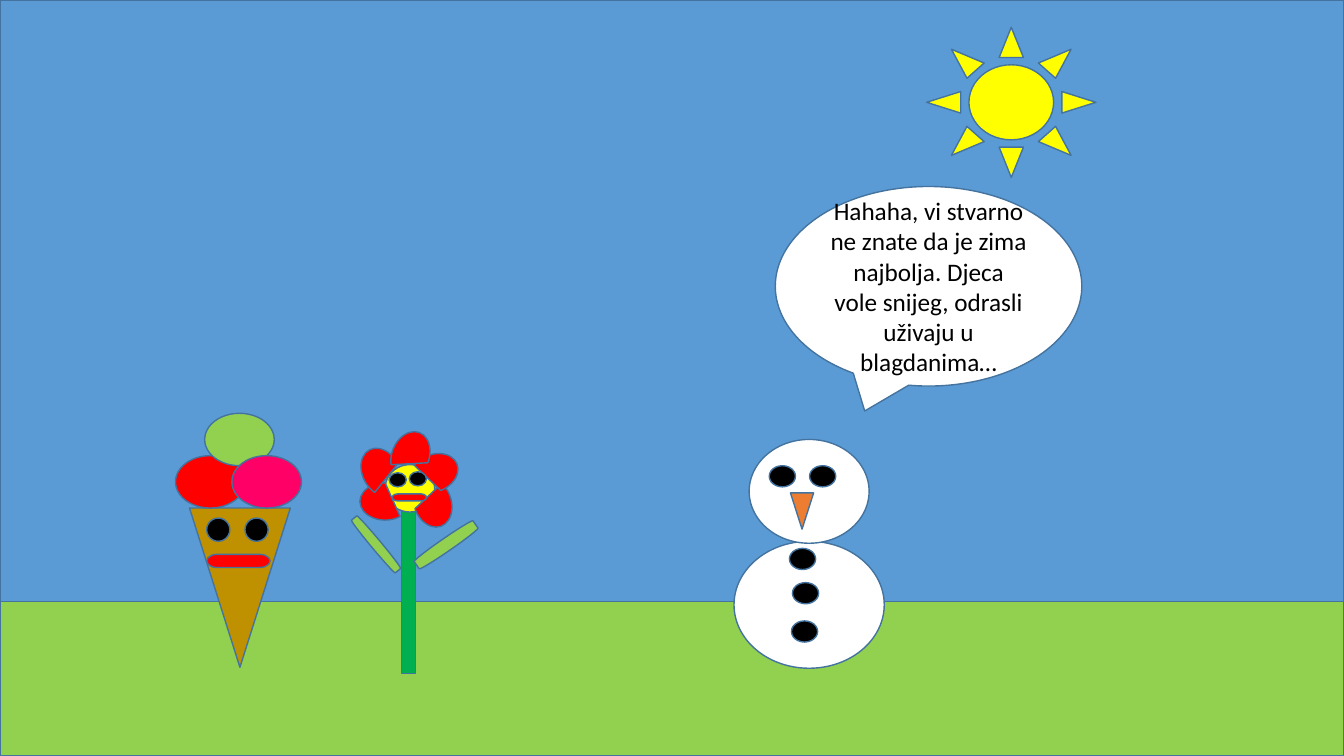
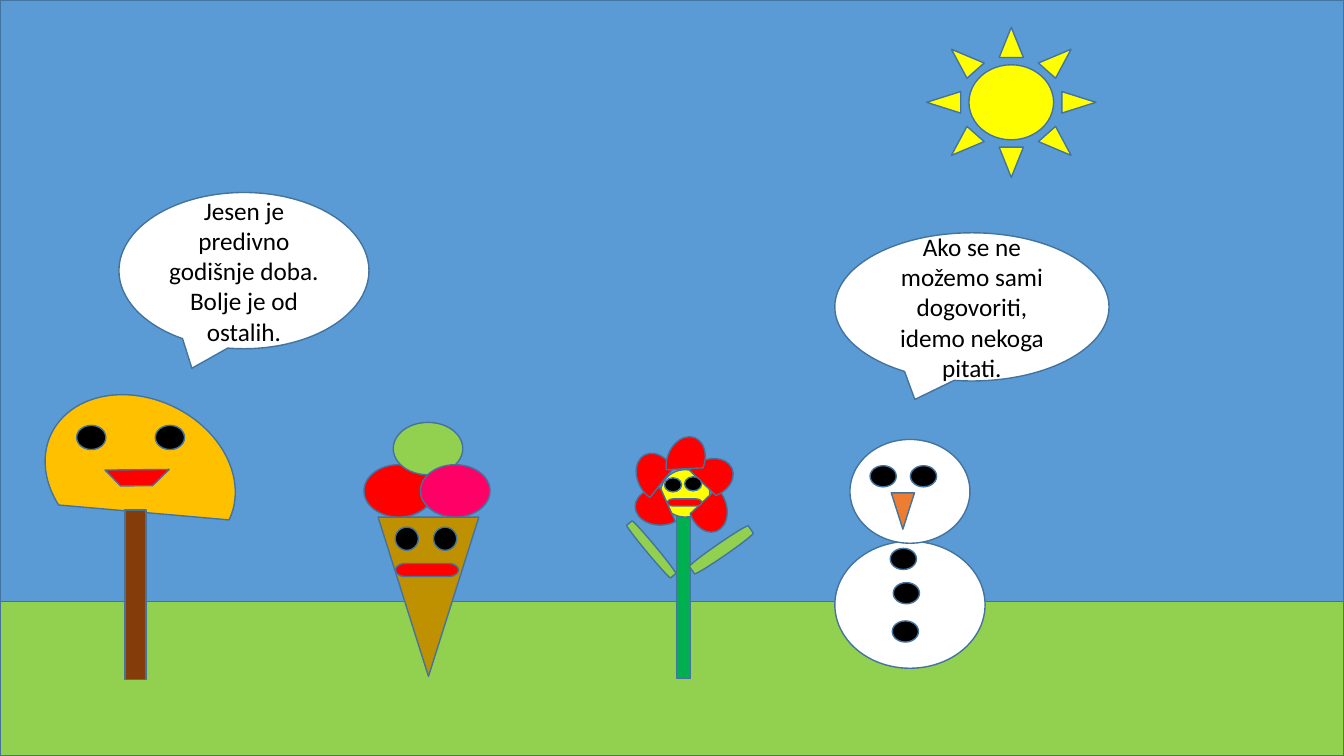
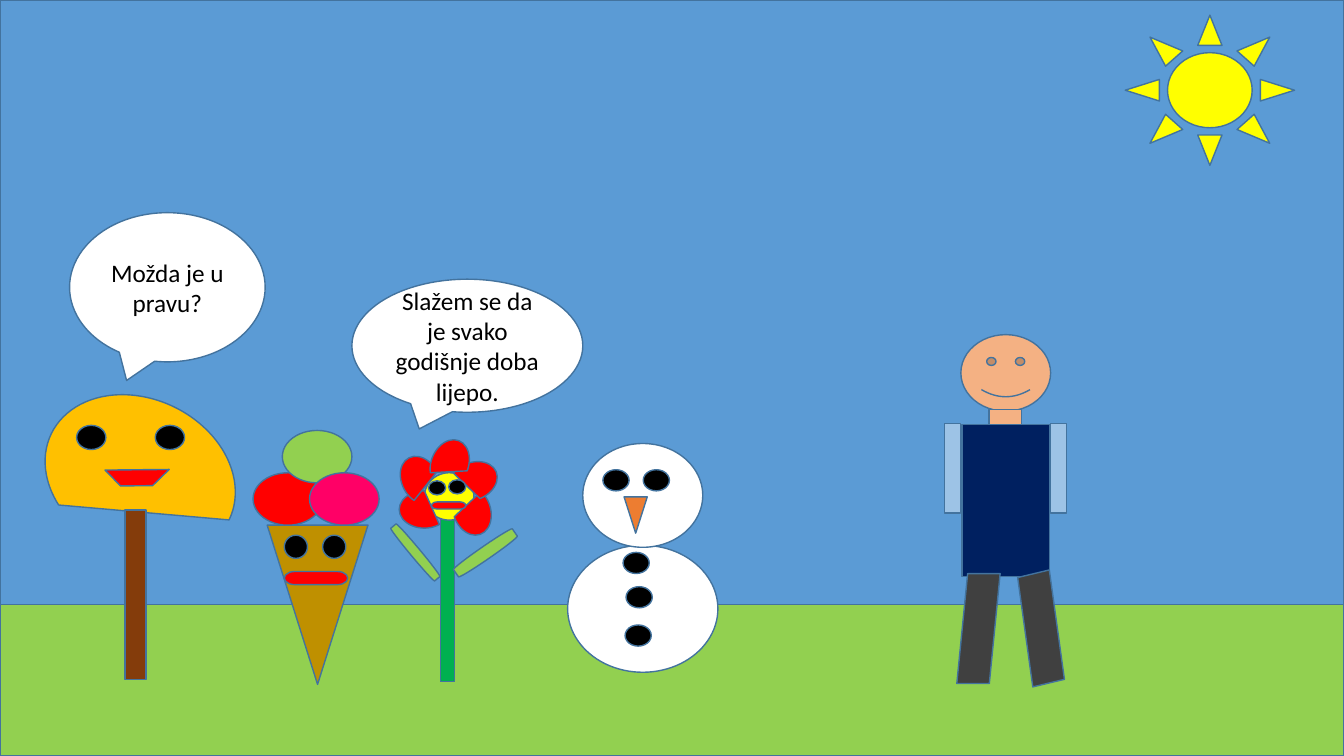
from dataclasses import dataclass

from pptx import Presentation
from pptx.dml.color import RGBColor
from pptx.enum.shapes import MSO_SHAPE as S
from pptx.enum.text import MSO_ANCHOR, PP_ALIGN
from pptx.util import Inches, Pt


@dataclass(frozen=True)
class Theme:
    width: float = 13.33
    height: float = 7.5
    font: str = "Calibri"
    text_size: float = 18
    line_width: float = 1
    line: str = "43739E"
    sky: str = "5B9BD5"
    grass: str = "92D050"
    sun: str = "FFFF00"
    white: str = "FFFFFF"
    black: str = "000000"
    red: str = "FF0000"
    pink: str = "FF0066"
    stem: str = "00B050"
    cone: str = "BF9000"
    carrot: str = "ED7D31"
    crown: str = "FFC000"
    trunk: str = "843C0B"
    skin: str = "F4B183"
    vest: str = "002060"
    sleeve: str = "9DC3E6"
    trousers: str = "404040"


T = Theme()

PETALS = [(0.04, 0.45, 0), (0.51, 0.46, 250.8), (0.52, 0.17, 157.7),
          (0, 0.16, 62.6), (0.29, 0, 111)]

FLOWER = [
    (S.RECTANGLE, T.stem, 0.45, 0.73, 0.14, 1.61),
    (S.OVAL, T.sun, 0.29, 0.27, 0.49, 0.47),
    *[(S.CHORD, T.red, x, y, 0.5, 0.37, rot) for x, y, rot in PETALS],
    (S.OVAL, T.black, 0.53, 0.34, 0.17, 0.14),
    (S.OVAL, T.black, 0.33, 0.35, 0.17, 0.14),
    (S.FLOWCHART_TERMINATOR, T.red, 0.36, 0.56, 0.34, 0.07),
    (S.FLOWCHART_TERMINATOR, T.grass, 0.83, 0.71, 0.13, 0.71, 55.3),
    (S.FLOWCHART_TERMINATOR, T.grass, 0.15, 0.72, 0.1, 0.68, 320.2),
]

SCOOPS = [(T.red, 0, 0.42), (T.grass, 0.29, 0), (T.pink, 0.56, 0.42)]

ICE_CREAM = [
    (S.FLOWCHART_MERGE, T.cone, 0.14, 0.94, 1, 1.58),
    *[(S.OVAL, color, x, y, 0.69, 0.52) for color, x, y in SCOOPS],
    *[(S.OVAL, T.black, x, 1.04, 0.23, 0.23) for x in (0.31, 0.69)],
    (S.FLOWCHART_TERMINATOR, T.red, 0.31, 1.4, 0.63, 0.13),
]

COALS = [(0.35, 0.26), (0.75, 0.26), (0.55, 1.08), (0.58, 1.42), (0.57, 1.8)]

SNOWMAN = [
    (S.OVAL, T.white, 0, 1.01, 1.49, 1.26),
    (S.OVAL, T.white, 0.15, 0, 1.19, 1.03),
    *[(S.OVAL, T.black, x, y, 0.26, 0.21) for x, y in COALS],
    (S.FLOWCHART_MERGE, T.carrot, 0.56, 0.53, 0.23, 0.36),
]

TREE = [
    (S.CHORD, T.crown, 0, 0, 1.54, 1.96, 115.9),
    (S.RECTANGLE, T.trunk, 0.62, 1.31, 0.21, 1.68),
    *[(S.OVAL, T.black, x, 0.47, 0.29, 0.24) for x in (0.92, 0.14)],
    (S.DIAGONAL_STRIPE, T.red, 0.52, 0.68, 0.44, 0.46, 225.7),
]

PERSON = [
    (S.SMILEY_FACE, T.skin, 0.16, 0, 0.89, 0.76),
    (S.RECTANGLE, T.vest, 0.17, 0.89, 0.87, 1.51),
    (S.RECTANGLE, T.skin, 0.44, 0.74, 0.32, 0.15),
    *[(S.RECTANGLE, T.sleeve, x, 0.88, 0.16, 0.89) for x in (0, 1.05)],
    (S.PARALLELOGRAM, T.trousers, 0.12, 2.37, 0.43, 1.09),
    (S.PARALLELOGRAM, T.trousers, 0.74, 2.37, 0.43, 1.09, 166.5),
]


class Stage:
    def __init__(self, theme):
        self.theme = theme
        self.prs = Presentation()
        self.prs.slide_width = Inches(theme.width)
        self.prs.slide_height = Inches(theme.height)
        self.slide = None

    def scene(self, horizon, sun_x, sun_y):
        t = self.theme
        self.slide = self.prs.slides.add_slide(self.prs.slide_layouts[6])
        shapes = self.slide.shapes
        self.shape(shapes, S.RECTANGLE, t.grass, 0, horizon, t.width, t.height - horizon)
        self.shape(shapes, S.RECTANGLE, t.sky, 0, 0, t.width, horizon)
        self.shape(shapes, S.SUN, t.sun, sun_x, sun_y, 1.68, 1.49)

    def shape(self, shapes, kind, color, x, y, w, h, rot=0):
        sp = shapes.add_shape(kind, Inches(x), Inches(y), Inches(w), Inches(h))
        sp.rotation = rot
        sp.shadow.inherit = False
        sp.fill.solid()
        sp.fill.fore_color.rgb = RGBColor.from_string(color)
        sp.line.color.rgb = RGBColor.from_string(self.theme.line)
        sp.line.width = Pt(self.theme.line_width)
        return sp

    def character(self, parts, left, top):
        group = self.slide.shapes.add_group_shape()
        for kind, color, x, y, *rest in parts:
            self.shape(group.shapes, kind, color, left + x, top + y, *rest)

    def speech(self, text, x, y, w, h):
        t = self.theme
        sp = self.shape(self.slide.shapes, S.OVAL_CALLOUT, t.white, x, y, w, h)
        tf = sp.text_frame
        tf.word_wrap = True
        tf.vertical_anchor = MSO_ANCHOR.MIDDLE
        p = tf.paragraphs[0]
        p.text = text
        p.alignment = PP_ALIGN.CENTER
        p.font.name = t.font
        p.font.size = Pt(t.text_size)
        p.font.color.rgb = RGBColor.from_string(t.black)


def main():
    stage = Stage(T)

    stage.scene(5.97, 9.19, 0.27)
    stage.character(FLOWER, 3.53, 4.34)
    stage.character(ICE_CREAM, 1.74, 4.1)
    stage.character(SNOWMAN, 7.28, 4.36)
    stage.speech("Hahaha, vi stvarno ne znate da je zima najbolja. "
                 "Djeca vole snijeg, odrasli uživaju u blagdanima…",
                 7.69, 1.85, 3.04, 1.98)

    stage.scene(5.97, 9.19, 0.27)
    stage.character(FLOWER, 6.26, 4.39)
    stage.character(ICE_CREAM, 3.61, 4.19)
    stage.character(SNOWMAN, 8.28, 4.36)
    stage.character(TREE, 0.62, 3.75)
    stage.speech("Jesen je predivno godišnje doba. Bolje je od ostalih.",
                 1.18, 1.91, 2.48, 1.55)
    stage.speech("Ako se ne možemo sami dogovoriti, idemo nekoga pitati.",
                 8.28, 2.31, 2.72, 1.47)

    stage.scene(6, 11.16, 0.15)
    stage.character(FLOWER, 3.92, 4.42)
    stage.character(ICE_CREAM, 2.51, 4.27)
    stage.character(SNOWMAN, 5.63, 4.4)
    stage.character(TREE, 0.62, 3.75)
    stage.character(PERSON, 9.37, 3.32)
    stage.speech("Možda je u pravu?", 0.69, 2.11, 1.94, 1.48)
    stage.speech("Slažem se da je svako godišnje doba lijepo.",
                 3.49, 2.77, 2.29, 1.32)

    stage.prs.save("out.pptx")


if __name__ == "__main__":
    main()
